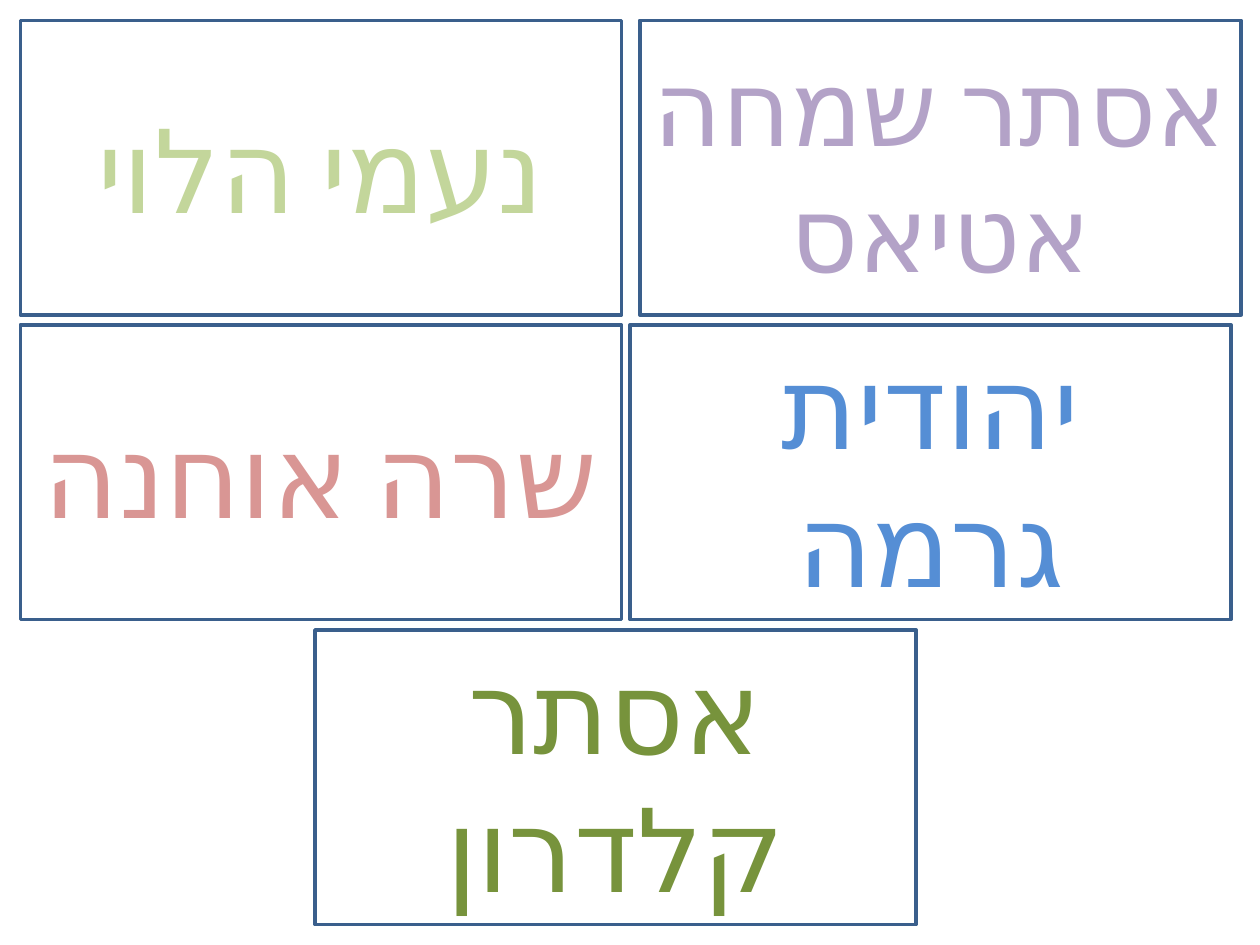
"""Build a slide of framed name cards in Hebrew."""
from lxml import etree
from pptx import Presentation
from pptx.dml.color import RGBColor
from pptx.enum.lang import MSO_LANGUAGE_ID
from pptx.enum.shapes import MSO_SHAPE
from pptx.enum.text import MSO_ANCHOR, PP_ALIGN
from pptx.oxml.ns import qn
from pptx.util import Cm, Pt

RECTANGLE = MSO_SHAPE.RECTANGLE
MIDDLE = MSO_ANCHOR.MIDDLE
CENTER = PP_ALIGN.CENTER
HEBREW = MSO_LANGUAGE_ID.HEBREW

WHITE = RGBColor(0xFF, 0xFF, 0xFF)
FRAME_BLUE = RGBColor(0x3A, 0x5F, 0x8C)
LILAC = RGBColor(0xB3, 0xA2, 0xC7)
BLUE = RGBColor(0x55, 0x8E, 0xD5)
LIGHT_GREEN = RGBColor(0xC3, 0xD6, 0x9B)
ROSE = RGBColor(0xD9, 0x96, 0x94)
GREEN = RGBColor(0x77, 0x93, 0x3C)

FONT = "Calibri"
CARD_WIDTH, CARD_HEIGHT = Cm(12.12), Cm(5.94)
LEFT_COLUMN = Cm(0.41)
ROWS = [Cm(0.41), Cm(6.55), Cm(12.7)]

CARDS = [
    ("אסתר שמחה אטיאס", Cm(12.9), ROWS[0], LILAC, 60),
    ("יהודית גרמה", Cm(12.7), ROWS[1], BLUE, 66),
    ("נעמי הלוי", LEFT_COLUMN, ROWS[0], LIGHT_GREEN, 66),
    ("שרה אוחנה", LEFT_COLUMN, ROWS[1], ROSE, 66),
    ("אסתר קלדרון", Cm(6.35), ROWS[2], GREEN, 66),
]


def write_text(box, text, *, size, color, font=FONT):
    """Write one centred right-to-left paragraph into a box."""
    frame = box.text_frame
    frame.word_wrap = True
    frame.vertical_anchor = MIDDLE
    para = frame.paragraphs[0]
    para.alignment = CENTER
    para._p.get_or_add_pPr().set("rtl", "1")
    span = para.add_run()
    span.text = text
    span.font.size = Pt(size)
    span.font.name = font
    span.font.color.rgb = color
    span.font.language_id = HEBREW
    complex_font = etree.SubElement(span._r.get_or_add_rPr(), qn("a:cs"))
    complex_font.set("typeface", font)


def add_card(page, text, left, top, color, size):
    """Add a framed white card with a name."""
    box = page.shapes.add_shape(RECTANGLE, left, top, CARD_WIDTH, CARD_HEIGHT)
    box.shadow.inherit = False
    box.fill.solid()
    box.fill.fore_color.rgb = WHITE
    box.line.color.rgb = FRAME_BLUE
    box.line.width = Pt(2)
    write_text(box, text, size=size, color=color)


def main():
    """Create the deck and save it."""
    deck = Presentation()
    deck.slide_width, deck.slide_height = Cm(25.4), Cm(19.05)
    page = deck.slides.add_slide(deck.slide_layouts[6])
    for card in CARDS:
        add_card(page, *card)
    deck.save("out.pptx")


if __name__ == "__main__":
    main()
